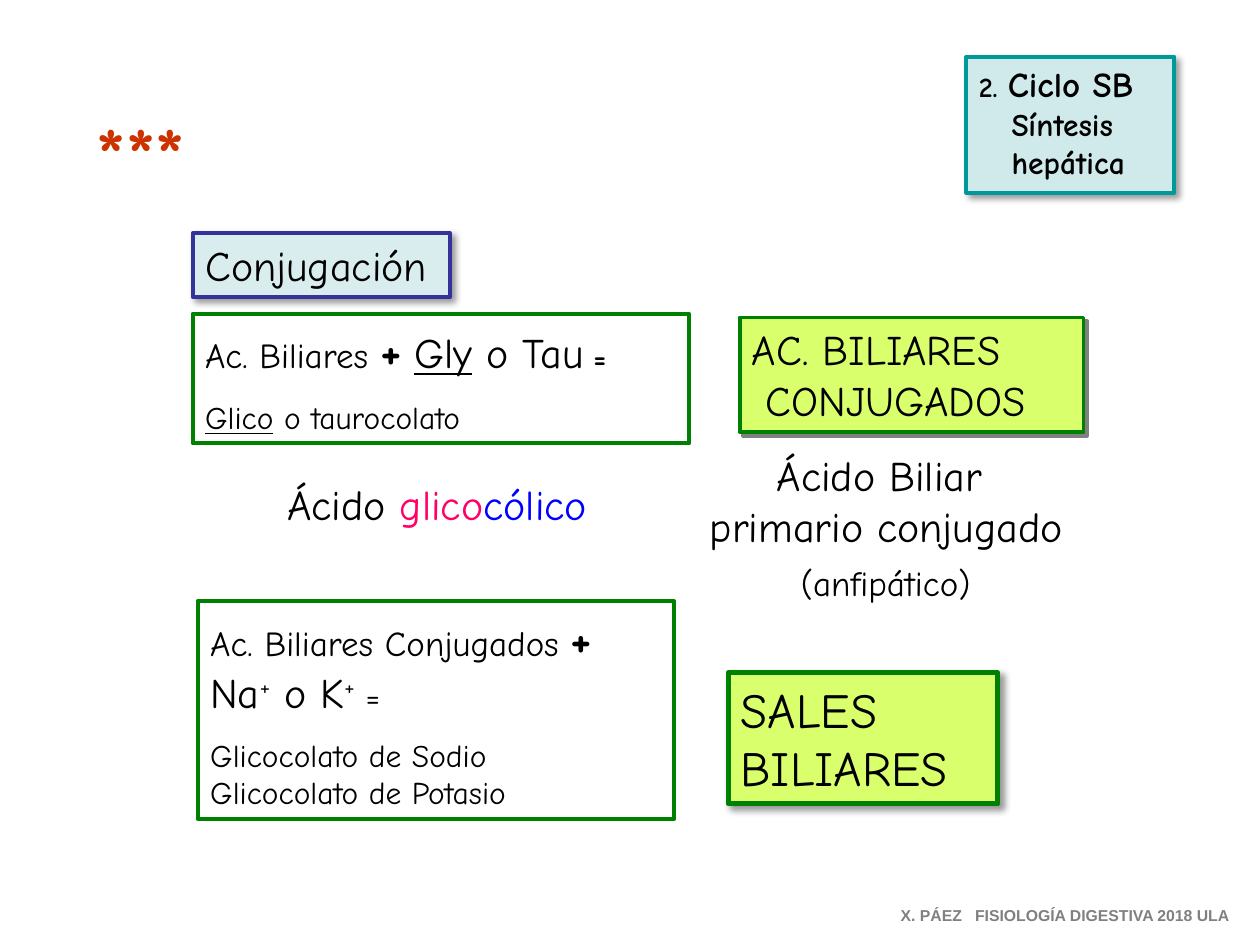
from lxml.etree import SubElement
from pptx import Presentation
from pptx.dml.color import RGBColor
from pptx.enum.shapes import MSO_SHAPE
from pptx.enum.text import MSO_ANCHOR, MSO_AUTO_SIZE, PP_ALIGN
from pptx.oxml.ns import qn
from pptx.util import Inches, Pt

BLACK = RGBColor(0x00, 0x00, 0x00)
GRAY = RGBColor(0x80, 0x80, 0x80)
GREEN = RGBColor(0x00, 0x80, 0x00)
LIME = RGBColor(0xD9, 0xFF, 0x6D)
NAVY = RGBColor(0x33, 0x33, 0x99)
TEAL = RGBColor(0x00, 0x99, 0x99)
PALE_BLUE = RGBColor(0xD9, 0xED, 0xEF)
PALE_TEAL = RGBColor(0xD0, 0xEA, 0xEC)
RED = RGBColor(0xCC, 0x33, 0x00)
PINK = RGBColor(0xFF, 0x00, 0x66)
BLUE = RGBColor(0x00, 0x00, 0xFF)

deck = Presentation()
deck.slide_width, deck.slide_height = Inches(10), Inches(7.5)
COL, ROW = deck.slide_width / 100, deck.slide_height / 75
slide = deck.slides.add_slide(deck.slide_layouts[5])

BOLD = {"bold": True}
UNDERLINED = {"underline": True}
CENTER = {"alignment": PP_ALIGN.CENTER}
GAP = {"space_before": Pt(11)}
SOFT = (BLACK, 40, 4, 3)
HARD = (GRAY, 100, 0, 2.8)


def add_shadow(parent, color, opacity, blur, distance):
    """Append an outer shadow falling to the lower right to an effect list."""
    outer = SubElement(parent, qn("a:outerShdw"), blurRad=str(Pt(blur)),
                       dist=str(Pt(distance)), dir=str(45 * 60000), algn="tl", rotWithShape="0")
    shade = SubElement(outer, qn("a:srgbClr"), val=str(color))
    SubElement(shade, qn("a:alpha"), val=str(opacity * 1000))


def write(shape, paragraphs, font_name="Comic Neue"):
    """Fill a shape with (paragraph format, [(text, size, font format, colour)])."""
    frame = shape.text_frame
    layout = {"word_wrap": True, "auto_size": MSO_AUTO_SIZE.NONE,
              "vertical_anchor": MSO_ANCHOR.TOP}
    for key, value in layout.items():
        setattr(frame, key, value)
    for number, (paragraph_format, runs) in enumerate(paragraphs):
        paragraph = frame.add_paragraph() if number else frame.paragraphs[0]
        for key, value in ({"alignment": PP_ALIGN.LEFT} | paragraph_format).items():
            setattr(paragraph, key, value)
        for text, size, font_format, *color in runs:
            run = paragraph.add_run()
            run.text = text
            values = {"name": font_name, "size": Pt(size), "bold": False}
            for key, value in (values | font_format).items():
                setattr(run.font, key, value)
            run.font.color.rgb = color[0] if color else BLACK
    return frame


# Framed boxes: place, fill, line, line width, shadow, paragraphs
conjugation = slide.shapes.title
boxes = [
    ((15.3, 18.5, 20.4, 5.1), PALE_BLUE, NAVY, 2.25, SOFT,
     [({}, [("Conjugación", 24, {})])]),
    ((15.3, 24.9, 39.4, 10.3), None, GREEN, 2.25, None,
     [({}, [("Ac. Biliares ", 20, {}), ("+", 28, BOLD), (" ", 20, BOLD),
            ("Gly", 24, UNDERLINED), (" o Tau", 24, {}), (" =", 16, BOLD)]),
      (GAP, [("Glico", 18, UNDERLINED), (" o taurocolato", 18, {})])]),
    ((15.7, 47.7, 37.8, 17.3), None, GREEN, 2.25, None,
     [({}, [("Ac. Biliares Conjugados ", 20, {}), ("+", 28, BOLD)]),
      ({}, [("Na", 24, {}), ("+", 24, {}), (" o K", 24, {}), ("+", 24, {}),
            (" ", 18, {}), ("=", 18, {})]),
      (GAP, [("Glicocolato de Sodio", 18, {})]),
      ({}, [("Glicocolato de Potasio", 18, {})])]),
    ((58.7, 25.2, 27.3, 9.1), LIME, GREEN, 2.25, HARD,
     [({}, [("AC. BILIARES", 24, {})]), ({}, [(" CONJUGADOS", 24, {})])]),
    ((57.8, 53.4, 21.4, 10.4), LIME, GREEN, 3, SOFT,
     [({}, [("SALES", 28, {})]), ({}, [("BILIARES", 28, {})])]),
    ((76.7, 4.5, 16.5, 10.8), PALE_TEAL, TEAL, 2.25, SOFT,
     [({}, [("2. ", 16, BOLD), ("Ciclo SB", 20, BOLD)]),
      ({}, [("Síntesis", 18, BOLD)]), ({}, [("hepática", 18, BOLD)])]),
]
frames = []
for (x, y, w, h), fill, line, line_width, shadow, paragraphs in boxes:
    place = {"left": round(x * COL), "top": round(y * ROW),
             "width": round(w * COL), "height": round(h * ROW)}
    if not frames:
        box = conjugation
        for key, value in place.items():
            setattr(box, key, value)
    else:
        box = slide.shapes.add_shape(MSO_SHAPE.RECTANGLE, **place)
    if fill is None:
        box.fill.background()
    else:
        box.fill.solid()
        box.fill.fore_color.rgb = fill
    box.line.color.rgb = line
    box.line.width = Pt(line_width)
    box.shadow.inherit = False
    if shadow:
        add_shadow(box._element.spPr.find(qn("a:effectLst")), *shadow)
    frames.append(write(box, paragraphs))

# Raised charges of the sodium and potassium ions
for run in frames[2].paragraphs[1].runs:
    if run.text == "+":
        run.font._element.set("baseline", "30000")

# Lines under the cycle heading start at the heading's word
for paragraph in frames[-1].paragraphs[1:]:
    paragraph._p.get_or_add_pPr().set("marL", str(Inches(0.26)))

# Free text: place, font, paragraphs
labels = [
    ((6.7, 7.9, 11.8, 8.4), "Comic Neue", [({}, [("***", 44, BOLD, RED)])]),
    ((20.7, 37.5, 28, 5.1), "Comic Neue",
     [(CENTER, [("Ácido ", 24, {}), ("glico", 24, {}, PINK), ("cólico", 24, {}, BLUE)])]),
    ((53, 35.2, 34.7, 9.1), "Comic Neue",
     [(CENTER, [("Ácido Biliar ", 24, {})]), (CENTER, [("primario conjugado", 24, {})])]),
    ((61.7, 44.1, 17.2, 4.4), "Comic Neue", [(CENTER, [("(anfipático)", 20, {})])]),
    ((70.5, 71.4, 28.5, 2.5), "Arial",
     [({}, [("X. PÁEZ\tFISIOLOGÍA DIGESTIVA 2018 ULA", 9, BOLD, GRAY)])]),
]
label_frames = []
for (x, y, w, h), font_name, paragraphs in labels:
    label = slide.shapes.add_textbox(round(x * COL), round(y * ROW),
                                     round(w * COL), round(h * ROW))
    label_frames.append(write(label, paragraphs, font_name))

# Shadow behind the asterisks
asterisk_fill = label_frames[0].paragraphs[0].runs[0].font._element.find(qn("a:solidFill"))
effects = asterisk_fill.makeelement(qn("a:effectLst"))
asterisk_fill.addnext(effects)
add_shadow(effects, BLACK, 100, 0, 3)

# Tab stop between author and course
tabs = SubElement(label_frames[-1].paragraphs[0]._p.get_or_add_pPr(), qn("a:tabLst"))
SubElement(tabs, qn("a:tab"), pos=str(Inches(0.59)), algn="l")

deck.save("out.pptx")
